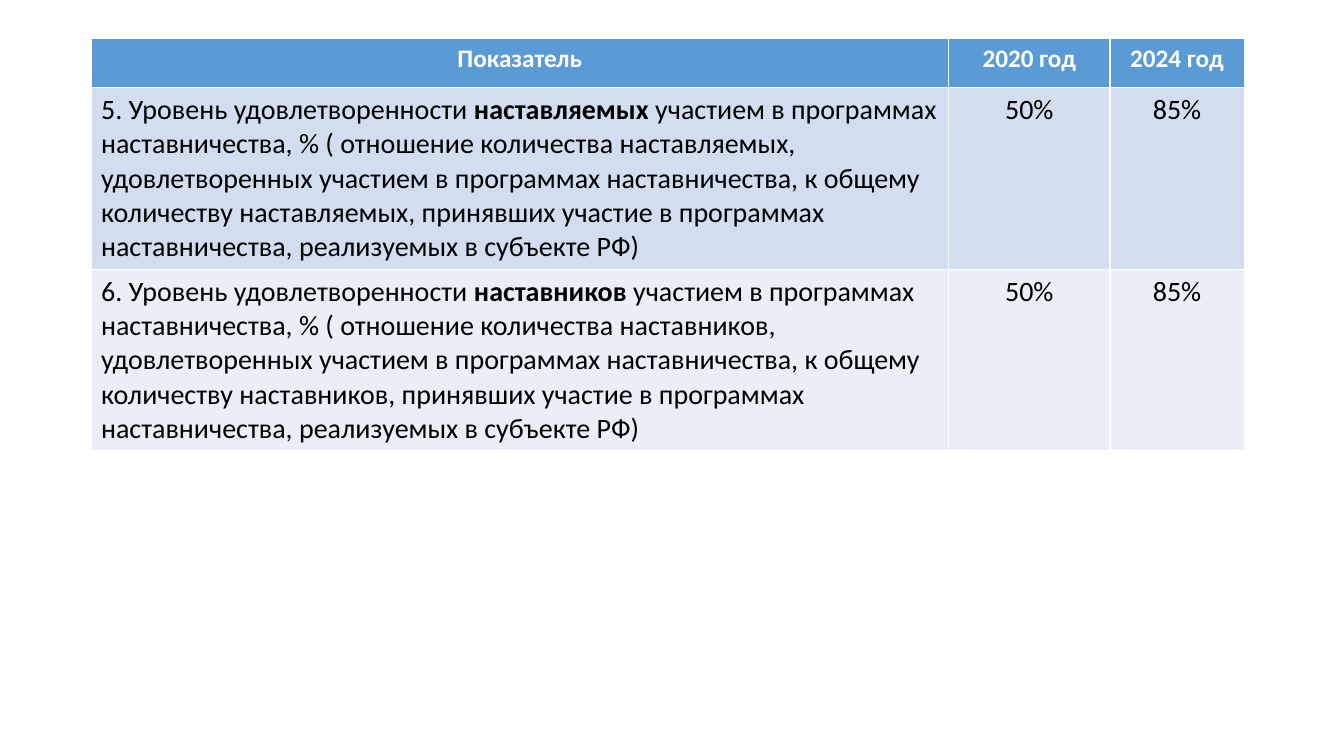
from pptx import Presentation
from pptx.dml.color import RGBColor
from pptx.enum.text import PP_ALIGN as Align
from pptx.util import Pt

COLORS = {
    "header": "5B9BD5",
    "odd": "D2DEEF",
    "even": "EAEFF7",
    "white": "FFFFFF",
    "black": "000000",
}
COLUMN_WIDTHS = [612.7, 115.2, 95.8]
ROW_HEIGHTS = [35.3, 120.2, 120.2]
HEADINGS = ["Показатель", "2020 год", "2024 год"]
INDICATORS = [(5, "наставляемых"), (6, "наставников")]
TARGETS = ["50%", "85%"]


def indicator_spans(number, people):
    """Return (text, bold) pairs for one satisfaction indicator."""
    return [
        (f"{number}. Уровень удовлетворенности ", False),
        (people, True),
        (" участием в программах наставничества, % ( отношение количества "
         f"{people}, удовлетворенных участием в программах наставничества, "
         f"к общему количеству {people}, принявших участие в программах "
         "наставничества, реализуемых в субъекте РФ)", False),
    ]


def fill_cell(cell, spans, fill, size=20, color="black", align=Align.CENTER):
    cell.fill.solid()
    cell.fill.fore_color.rgb = RGBColor.from_string(COLORS[fill])
    para = cell.text_frame.paragraphs[0]
    para.alignment = align
    para.font.name = "Calibri"
    para.font.size = Pt(size)
    para.font.color.rgb = RGBColor.from_string(COLORS[color])
    for text, bold in spans:
        span = para.add_run()
        span.text = text
        span.font.bold = bold


def add_indicator_table(page):
    frame = page.shapes.add_table(
        len(ROW_HEIGHTS), len(COLUMN_WIDTHS), Pt(65), Pt(27.5),
        Pt(sum(COLUMN_WIDTHS)), Pt(sum(ROW_HEIGHTS)))
    table = frame.table
    for column, width in zip(table.columns, COLUMN_WIDTHS):
        column.width = Pt(width)
    for row, height in zip(table.rows, ROW_HEIGHTS):
        row.height = Pt(height)

    for column, heading in enumerate(HEADINGS):
        fill_cell(table.cell(0, column), [(heading, True)], "header", 18, "white")
    for row, (number, people) in enumerate(INDICATORS, 1):
        band = "odd" if row % 2 else "even"
        fill_cell(table.cell(row, 0), indicator_spans(number, people), band,
                  align=Align.LEFT)
        for column, target in enumerate(TARGETS, 1):
            fill_cell(table.cell(row, column), [(target, False)], band)


def main():
    deck = Presentation()
    deck.slide_width, deck.slide_height = Pt(960), Pt(540)
    page = deck.slides.add_slide(deck.slide_layouts[6])
    add_indicator_table(page)
    deck.save("out.pptx")


if __name__ == "__main__":
    main()
